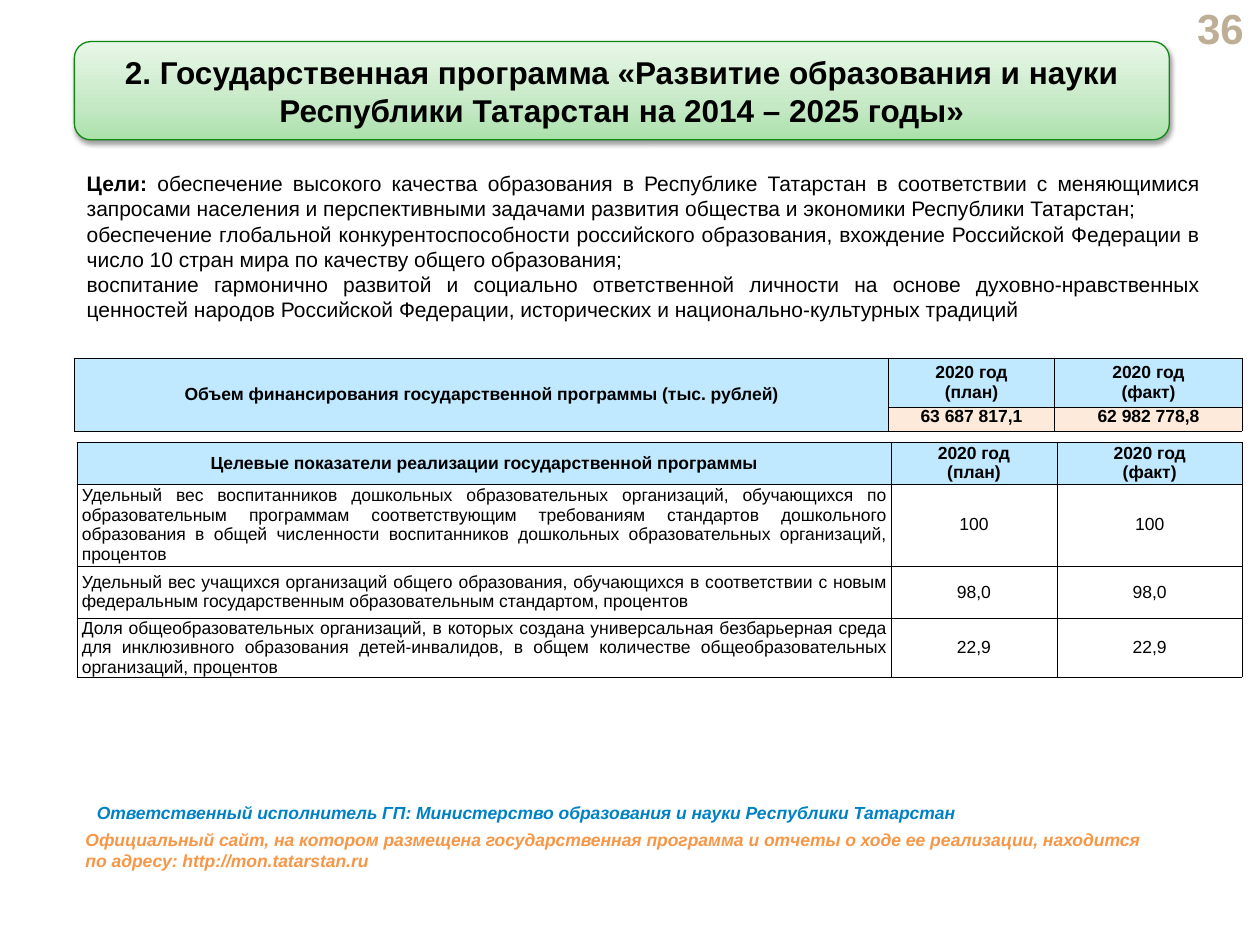
from lxml import etree
from pptx import Presentation
from pptx.dml.color import RGBColor
from pptx.enum.shapes import MSO_SHAPE
from pptx.enum.text import MSO_ANCHOR, PP_ALIGN
from pptx.oxml import parse_xml
from pptx.oxml.ns import nsdecls, qn
from pptx.util import Inches, Pt

LEFT, CENTER, RIGHT, JUSTIFY = PP_ALIGN.LEFT, PP_ALIGN.CENTER, PP_ALIGN.RIGHT, PP_ALIGN.JUSTIFY
TOP, MIDDLE = MSO_ANCHOR.TOP, MSO_ANCHOR.MIDDLE
ROUNDED = MSO_SHAPE.ROUNDED_RECTANGLE

BLACK = RGBColor(0x00, 0x00, 0x00)
WHITE = RGBColor(0xFF, 0xFF, 0xFF)
SAND = RGBColor(0xBF, 0xAE, 0x96)
GREEN = RGBColor(0x10, 0x88, 0x12)
SKY = RGBColor(0xC0, 0xE9, 0xFF)
PEACH = RGBColor(0xFD, 0xEA, 0xDA)
BLUE = RGBColor(0x00, 0x81, 0xC5)
ORANGE = RGBColor(0xF7, 0x96, 0x46)
BANNER_STOPS = [(0, RGBColor(0xAB, 0xE1, 0xAB)), (35, RGBColor(0xC5, 0xE9, 0xC5)),
                (100, RGBColor(0xE8, 0xF7, 0xE8))]

TITLE = ("2. Государственная программа «Развитие образования и науки "
         "Республики Татарстан на 2014 – 2025 годы»")
GOALS = [
    "обеспечение высокого качества образования в Республике Татарстан в соответствии с "
    "меняющимися запросами населения и перспективными задачами развития общества и экономики "
    "Республики Татарстан;",
    "обеспечение глобальной конкурентоспособности российского образования, вхождение "
    "Российской Федерации в число 10 стран мира по качеству общего образования;",
    "воспитание гармонично развитой и социально ответственной личности на основе "
    "духовно-нравственных ценностей народов Российской Федерации, исторических и "
    "национально-культурных традиций",
]
YEARS = [["2020 год", "(план)"], ["2020 год", "(факт)"]]
FINANCING = ["63 687 817,1", "62 982 778,8"]
INDICATORS = [
    ("Удельный вес воспитанников дошкольных образовательных организаций, обучающихся по "
     "образовательным программам соответствующим требованиям стандартов дошкольного "
     "образования в общей численности воспитанников дошкольных образовательных организаций, "
     "процентов", "100", "100"),
    ("Удельный вес учащихся организаций общего образования, обучающихся в соответствии с новым "
     "федеральным государственным образовательным стандартом, процентов", "98,0", "98,0"),
    ("Доля общеобразовательных организаций, в которых создана универсальная безбарьерная среда "
     "для инклюзивного образования детей-инвалидов, в общем количестве общеобразовательных "
     "организаций, процентов", "22,9", "22,9"),
]


def inches(values):
    return [Inches(value) for value in values]


def add_run(paragraph, text, size, color=BLACK, bold=False, italic=False):
    run = paragraph.add_run()
    run.text = text
    font = run.font
    font.name, font.size, font.bold, font.italic = "Arial", Pt(size), bold, italic
    font.color.rgb = color


def add_paragraphs(frame, lines, size, alignment, **style):
    for index, line in enumerate(lines):
        paragraph = frame.add_paragraph() if index else frame.paragraphs[0]
        paragraph.alignment = alignment
        add_run(paragraph, line, size, **style)


def add_text(slide, box, lines, size, alignment=LEFT, anchor=TOP, **style):
    frame = slide.shapes.add_textbox(*inches(box)).text_frame
    frame.word_wrap = True
    frame.vertical_anchor = anchor
    add_paragraphs(frame, lines, size, alignment, **style)


def add_banner(slide, box):
    """Draw the green banner and lay the title placeholder over it."""
    banner = slide.shapes.add_shape(ROUNDED, *inches(box))
    banner.line.color.rgb = GREEN
    banner.line.width = Pt(0.75)
    stops = "".join(f'<a:gs pos="{position * 1000}"><a:srgbClr val="{color}"/></a:gs>'
                    for position, color in BANNER_STOPS)
    properties = banner._element.spPr
    properties.find(qn("a:prstGeom")).addnext(parse_xml(
        f'<a:gradFill {nsdecls("a")} rotWithShape="1"><a:gsLst>{stops}</a:gsLst>'
        '<a:lin ang="16200000" scaled="0"/></a:gradFill>'))
    properties.append(parse_xml(
        f'<a:effectLst {nsdecls("a")}><a:outerShdw blurRad="{Pt(3.1)}" dist="{Pt(1.6)}" '
        'dir="5400000" rotWithShape="0"><a:srgbClr val="000000"><a:alpha val="38000"/>'
        '</a:srgbClr></a:outerShdw></a:effectLst>'))

    title = slide.shapes.title
    title.left, title.top, title.width, title.height = inches(box)
    title.text_frame.word_wrap = True
    title.text_frame.vertical_anchor = MIDDLE
    add_paragraphs(title.text_frame, [TITLE], 18, CENTER, bold=True)
    banner._element.addnext(title._element)


def add_goals(slide, box):
    frame = slide.shapes.add_textbox(*inches(box)).text_frame
    frame.word_wrap = True
    frame.vertical_anchor = MIDDLE
    add_run(frame.paragraphs[0], "Цели: ", 12, bold=True)
    add_paragraphs(frame, GOALS, 12, JUSTIFY)


def add_grid(slide, left, top, columns, rows):
    """Add a table of the given column widths and row heights."""
    box = inches([left, top, sum(columns), sum(rows)])
    table = slide.shapes.add_table(len(rows), len(columns), *box).table
    for column, width in zip(table.columns, columns):
        column.width = Inches(width)
    for row, height in zip(table.rows, rows):
        row.height = Inches(height)
    for cell in table.iter_cells():
        properties = cell._tc.get_or_add_tcPr()
        for side in ("lnL", "lnR", "lnT", "lnB"):
            line = etree.SubElement(properties, qn(f"a:{side}"), w=str(Pt(0.25)))
            fill = etree.SubElement(line, qn("a:solidFill"))
            etree.SubElement(fill, qn("a:srgbClr"), val=str(BLACK))
    return table


def fill_cell(cell, lines, color, side_margin, alignment=CENTER, anchor=MIDDLE, bold=False):
    cell.fill.solid()
    cell.fill.fore_color.rgb = color
    cell.margin_left = cell.margin_right = Inches(side_margin)
    cell.margin_top = cell.margin_bottom = 0
    cell.vertical_anchor = anchor
    add_paragraphs(cell.text_frame, lines, 10, alignment, bold=bold)


def fill_header(table, caption, side_margin):
    for column, lines in enumerate([[caption], *YEARS]):
        fill_cell(table.cell(0, column), lines, SKY, side_margin, bold=True)


def add_financing_table(slide, left, top):
    table = add_grid(slide, left, top, [6.46, 1.32, 1.49], [0.39, 0.19])
    table.cell(0, 0).merge(table.cell(1, 0))
    fill_header(table, "Объем финансирования государственной программы (тыс. рублей)", 0.06)
    for column, amount in enumerate(FINANCING, start=1):
        fill_cell(table.cell(1, column), [amount], PEACH, 0.06, anchor=TOP, bold=True)
    for paragraph in table.cell(1, 0).text_frame.paragraphs:
        paragraph.font.size = Pt(10)


def add_indicator_table(slide, left, top):
    table = add_grid(slide, left, top, [6.46, 1.32, 1.47], [0.33, 0.65, 0.42, 0.45])
    fill_header(table, "Целевые показатели реализации государственной программы", 0.01)
    for row, values in enumerate(INDICATORS, start=1):
        for column, value in enumerate(values):
            fill_cell(table.cell(row, column), [value], WHITE, 0.04,
                      CENTER if column else JUSTIFY)


def main():
    presentation = Presentation()
    presentation.slide_width, presentation.slide_height = Inches(10), Inches(7.5)
    slide = presentation.slides.add_slide(presentation.slide_layouts[5])

    add_text(slide, (9.33, 0.05, 0.64, 0.34), ["36"], 24, RIGHT, MIDDLE, color=SAND, bold=True)
    add_financing_table(slide, 0.59, 2.84)
    add_goals(slide, (0.59, 1.3, 9.04, 1.31))
    add_banner(slide, (0.59, 0.33, 8.69, 0.78))
    add_indicator_table(slide, 0.61, 3.51)
    add_text(slide, (0.67, 6.32, 9.33, 0.27),
             ["Ответственный исполнитель ГП: Министерство образования и науки Республики Татарстан"],
             10, color=BLUE, bold=True, italic=True)
    add_text(slide, (0.58, 6.53, 8.75, 0.44),
             ["Официальный сайт, на котором размещена государственная программа и отчеты о ходе "
              "ее реализации, находится по адресу: http://mon.tatarstan.ru"],
             10, color=ORANGE, bold=True, italic=True)

    presentation.save("out.pptx")


if __name__ == "__main__":
    main()
